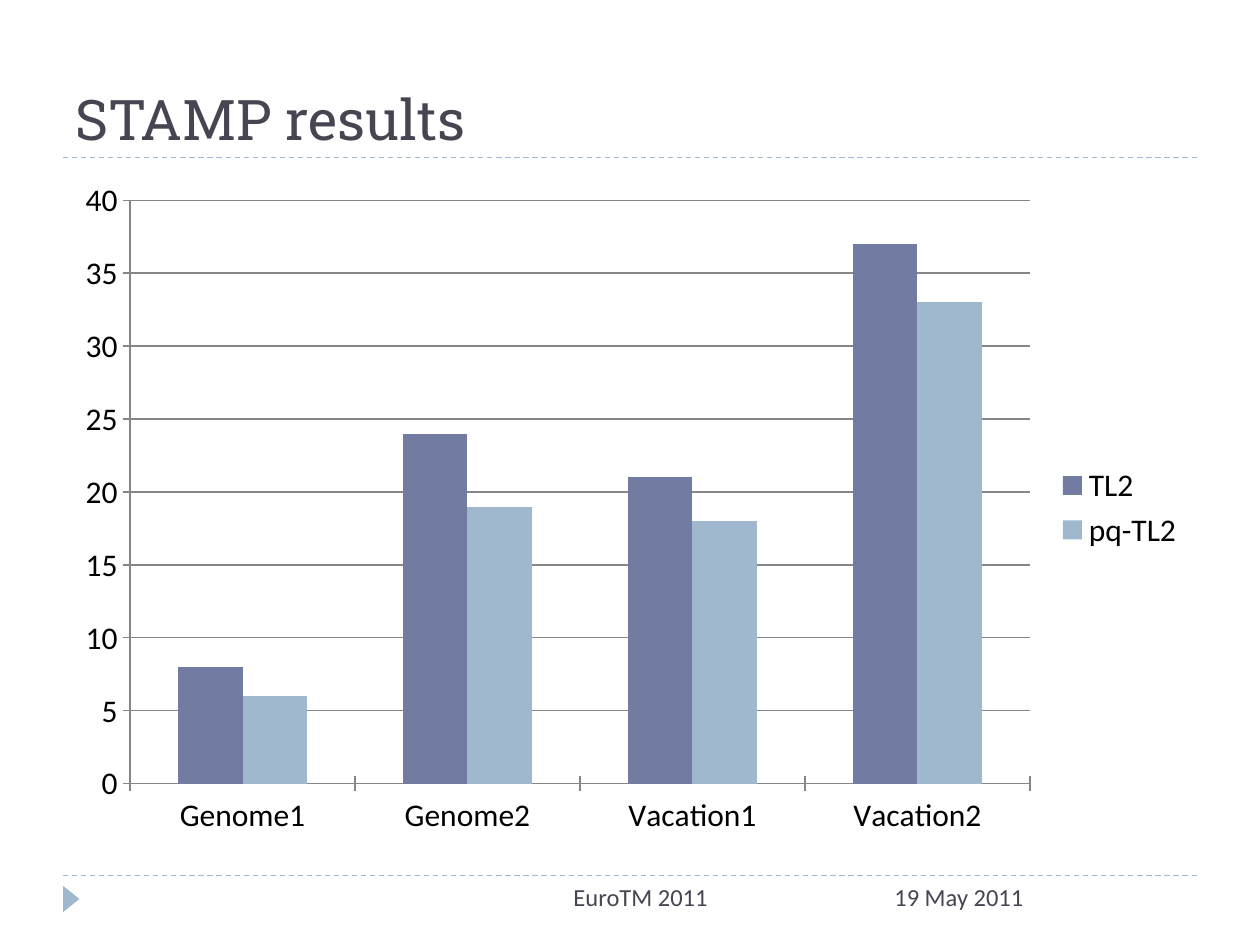
from lxml import etree
from pptx import Presentation
from pptx.chart.data import CategoryChartData
from pptx.dml.color import RGBColor
from pptx.enum.chart import XL_CHART_TYPE, XL_LEGEND_POSITION, XL_TICK_MARK
from pptx.enum.dml import MSO_LINE
from pptx.enum.shapes import MSO_CONNECTOR, MSO_SHAPE
from pptx.enum.text import MSO_ANCHOR, PP_ALIGN
from pptx.oxml.ns import qn
from pptx.util import Inches, Pt

COLUMNS = XL_CHART_TYPE.COLUMN_CLUSTERED
LEGEND_RIGHT = XL_LEGEND_POSITION.RIGHT
TICK_CROSS = XL_TICK_MARK.CROSS
DASH = MSO_LINE.DASH
STRAIGHT = MSO_CONNECTOR.STRAIGHT
TRIANGLE = MSO_SHAPE.ISOSCELES_TRIANGLE
TOP, BOTTOM = MSO_ANCHOR.TOP, MSO_ANCHOR.BOTTOM
LEFT, CENTER = PP_ALIGN.LEFT, PP_ALIGN.CENTER

INK = "464653"
BLUE = "9FB8CD"
GRID = "868686"
CATEGORIES = ["Genome1", "Genome2", "Vacation1", "Vacation2"]
SERIES = [
    ("TL2", [8, 24, 21, 37], "727CA3"),
    ("pq-TL2", [6, 19, 18, 33], BLUE),
]


def color(value):
    return RGBColor.from_string(value)


def apply(target, formats):
    for name, value in formats.items():
        setattr(target, name, value)


def inches(*lengths):
    return [Inches(length) for length in lengths]


def add_rule(page, top):
    rule = page.shapes.add_connector(STRAIGHT, *inches(0.5, top, 9.5, top))
    apply(rule.line, {"width": Pt(0.75), "dash_style": DASH})
    rule.line.color.rgb = color(BLUE)
    etree.SubElement(rule._element.spPr, qn("a:effectLst"))


def add_marker(page):
    marker = page.shapes.add_shape(TRIANGLE, *inches(0.46, 7.07, 0.21, 0.13))
    marker.rotation = 90
    marker.shadow.inherit = False
    marker.fill.solid()
    marker.fill.fore_color.rgb = color(BLUE)
    marker.line.fill.background()


def add_text(page, text, area, font, size, anchor=TOP, align=LEFT):
    box = page.shapes.add_textbox(*inches(*area))
    apply(box.text_frame, {"word_wrap": True, "vertical_anchor": anchor})
    para = box.text_frame.paragraphs[0]
    para.alignment = align
    span = para.add_run()
    span.text = text
    apply(span.font, {"name": font, "size": Pt(size)})
    span.font.color.rgb = color(INK)


def add_results_chart(page):
    data = CategoryChartData()
    data.categories = CATEGORIES
    for name, values, _ in SERIES:
        data.add_series(name, values)
    chart = page.shapes.add_chart(COLUMNS, *inches(0.5, 1.33, 9, 5.4), data).chart
    apply(chart, {"has_title": False, "has_legend": True})
    apply(chart.font, {"name": "Calibri", "size": Pt(18)})
    chart.font.color.rgb = color("000000")
    apply(chart.legend, {"position": LEGEND_RIGHT, "include_in_layout": False})

    plot = chart.plots[0]
    apply(plot, {"gap_width": 150, "overlap": 0, "vary_by_categories": False})
    for series, (_, _, fill) in zip(plot.series, SERIES):
        series.format.fill.solid()
        series.format.fill.fore_color.rgb = color(fill)

    chart.value_axis.has_major_gridlines = True
    apply(chart.value_axis, {"minimum_scale": 0, "maximum_scale": 40, "major_unit": 5})
    for axis in (chart.category_axis, chart.value_axis):
        axis.major_tick_mark = TICK_CROSS
    for part in (chart.category_axis, chart.value_axis, chart.value_axis.major_gridlines):
        part.format.line.width = Pt(0.75)
        part.format.line.color.rgb = color(GRID)


def main():
    deck = Presentation()
    apply(deck, {"slide_width": Inches(10), "slide_height": Inches(7.5)})
    page = deck.slides.add_slide(deck.slide_layouts[6])
    for top in (6.95, 1.25):
        add_rule(page, top)
    add_marker(page)
    add_text(page, "STAMP results", (0.5, 0.17, 9, 1.08), "Roboto Slab", 32, anchor=BOTTOM)
    add_text(page, "19 May 2011", (7, 6.95, 2.5, 0.4), "Calibri", 14)
    add_text(page, "EuroTM 2011", (3.17, 6.95, 3.83, 0.4), "Calibri", 14, align=CENTER)
    add_results_chart(page)
    deck.save("out.pptx")


if __name__ == "__main__":
    main()
